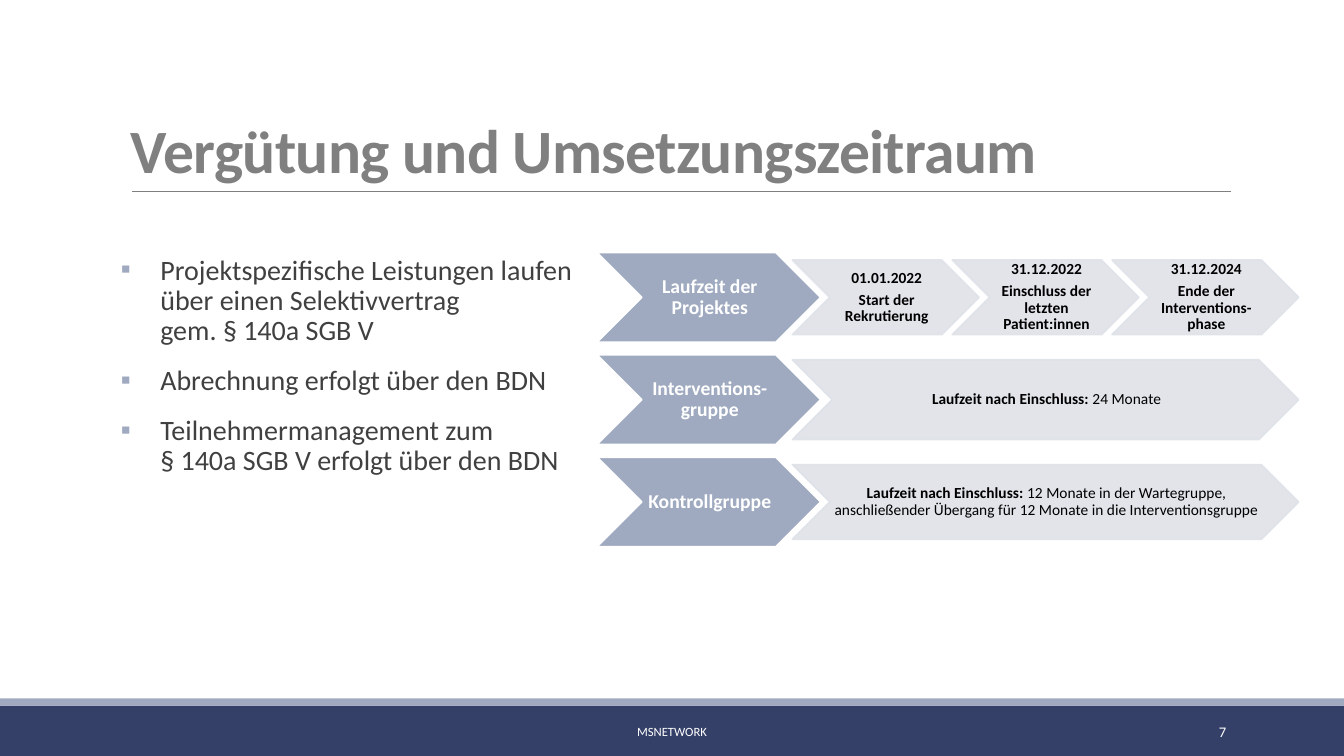
from dataclasses import dataclass

from lxml.etree import SubElement
from pptx import Presentation
from pptx.dml.color import RGBColor
from pptx.enum.shapes import MSO_CONNECTOR, MSO_SHAPE
from pptx.enum.text import MSO_ANCHOR, PP_ALIGN
from pptx.oxml.ns import qn
from pptx.util import Inches, Pt


@dataclass(frozen=True)
class Theme:
    """Colours, font and type sizes of the slide."""
    font: str = "Calibri"
    navy: str = "344068"
    blue: str = "9FAAC0"
    pale: str = "DFE2E8"
    grey: str = "808080"
    body: str = "404040"
    white: str = "FFFFFF"
    black: str = "000000"
    title_size: float = 44
    body_size: float = 20
    phase_size: float = 14
    detail_size: float = 11
    page_size: float = 10.5
    footer_size: float = 9


class SlideBuilder:
    """Draws styled elements on the current slide."""

    def __init__(self, slide, theme):
        """Keep the slide and its theme."""
        self.slide = slide
        self.theme = theme

    def style(self, span, size, color, bold=False):
        """Format one run."""
        span.font.name = self.theme.font
        span.font.size = Pt(size)
        span.font.bold = bold
        span.font.color.rgb = RGBColor.from_string(color)

    def shape(self, kind, left, top, width, height, fill):
        """Add a filled preset shape without outline or shadow."""
        shape = self.slide.shapes.add_shape(
            kind, Inches(left), Inches(top), Inches(width), Inches(height))
        shape.shadow.inherit = False
        shape.fill.solid()
        shape.fill.fore_color.rgb = RGBColor.from_string(fill)
        shape.line.fill.background()
        return shape

    def rule(self, left, right, top):
        """Add a thin horizontal line."""
        line = self.slide.shapes.add_connector(
            MSO_CONNECTOR.STRAIGHT, Inches(left), Inches(top), Inches(right), Inches(top))
        line.line.color.rgb = RGBColor.from_string(self.theme.grey)
        line.line.width = Pt(0.5)
        SubElement(line._element.spPr, qn("a:effectLst"))

    def text(self, words, left, top, width, height, size, color,
             align=PP_ALIGN.LEFT, anchor=MSO_ANCHOR.MIDDLE, bold=False):
        """Add a one-paragraph text box and return its paragraph."""
        box = self.slide.shapes.add_textbox(
            Inches(left), Inches(top), Inches(width), Inches(height))
        frame = box.text_frame
        frame.word_wrap = True
        frame.vertical_anchor = anchor
        frame.text = words
        para = frame.paragraphs[0]
        para.alignment = align
        self.style(para.runs[0], size, color, bold)
        return para

    def bullets(self, items, left, top, width, height):
        """Add a list with square bullets."""
        box = self.slide.shapes.add_textbox(
            Inches(left), Inches(top), Inches(width), Inches(height))
        frame = box.text_frame
        frame.word_wrap = True
        frame.margin_left = frame.margin_right = 0
        for index, item in enumerate(items):
            para = frame.paragraphs[0] if index == 0 else frame.add_paragraph()
            para.text = item
            props = para._p.get_or_add_pPr()
            props.set("marL", str(Inches(0.39)))
            props.set("indent", str(Inches(-0.39)))
            color = SubElement(props, qn("a:buClr"))
            SubElement(color, qn("a:srgbClr"), val=self.theme.blue)
            SubElement(props, qn("a:buFont"), typeface=self.theme.font)
            SubElement(props, qn("a:buChar"), char="▪")
            para.line_spacing = 0.9
            para.space_before = Pt(12 if index else 0)
            para.space_after = Pt(2)
            for span in para.runs:
                self.style(span, self.theme.body_size, self.theme.body)

    def chevron(self, lines, left, middle, width, height, size, fill, outline, color, opacity=100):
        """Add a chevron whose lines are pairs of bold and regular text."""
        shape = self.shape(MSO_SHAPE.CHEVRON, left, middle - height / 2, width, height, fill)
        shape.line.color.rgb = RGBColor.from_string(outline)
        shape.line.width = Pt(1.25)
        if opacity < 100:
            for paint in shape._element.spPr.iter(qn("a:srgbClr")):
                SubElement(paint, qn("a:alpha"), val=str(opacity * 1000))
        frame = shape.text_frame
        frame.word_wrap = True
        frame.vertical_anchor = MSO_ANCHOR.MIDDLE
        frame.margin_left, frame.margin_right = Inches(0.02), 0
        frame.margin_top = frame.margin_bottom = Inches(0.01)
        for index, (strong, plain) in enumerate(lines):
            para = frame.paragraphs[0] if index == 0 else frame.add_paragraph()
            para.text = strong
            para.alignment = PP_ALIGN.CENTER
            para.line_spacing = 0.9
            para.space_after = Pt(size * 0.35)
            self.style(para.runs[0], size, color, True)
            if plain:
                span = para.add_run()
                span.text = plain
                self.style(span, size, color)

    def phase(self, name, middle):
        """Add the dark chevron that names a row."""
        theme = self.theme
        self.chevron([(name, "")], 5.92, middle, 2.22, 0.89,
                     theme.phase_size, theme.blue, theme.white, theme.white)

    def detail(self, lines, left, middle, width, height):
        """Add a pale chevron with details of a row."""
        theme = self.theme
        self.chevron(lines, left, middle, width, height,
                     theme.detail_size, theme.pale, theme.pale, theme.black, 90)


BULLETS = [
    "Projektspezifische Leistungen laufen über einen Selektivvertrag\vgem. § 140a SGB V",
    "Abrechnung erfolgt über den BDN",
    "Teilnehmermanagement zum\v§ 140a SGB V erfolgt über den BDN",
]
TERM = "Laufzeit nach Einschluss: "
MILESTONES = [
    [("01.01.2022", ""), ("Start der Rekrutierung", "")],
    [("31.12.2022", ""), ("Einschluss der letzten Patient:innen", "")],
    [("31.12.2024", ""), ("Ende der Interventions-phase", "")],
]
ROWS = [
    ("Laufzeit der Projektes", MILESTONES, 1.85, 0.74),
    ("Interventions-gruppe", [[(TERM, "24 Monate")]], 5.02, 0.79),
    ("Kontrollgruppe", [[(TERM, "12 Monate in der Wartegruppe, anschließender Übergang "
                                "für 12 Monate in die Interventionsgruppe")]], 5.02, 0.74),
]


def main():
    """Build and save the slide."""
    deck = Presentation()
    deck.slide_width, deck.slide_height = Inches(13.33), Inches(7.5)
    theme = Theme()
    page = SlideBuilder(deck.slides.add_slide(deck.slide_layouts[6]), theme)

    page.shape(MSO_SHAPE.RECTANGLE, 0, 7, 13.33, 0.5, theme.navy)
    page.shape(MSO_SHAPE.RECTANGLE, 0, 6.93, 13.33, 0.07, theme.blue)
    page.rule(1.31, 12.21, 1.9)
    title = page.text("Vergütung und Umsetzungszeitraum", 1.2, 0.31, 11, 1.59,
                      theme.title_size, theme.grey, anchor=MSO_ANCHOR.BOTTOM, bold=True)
    title.line_spacing = 0.85
    title.runs[0]._r.get_or_add_rPr().set("spc", "-50")
    page.bullets(BULLETS, 1.2, 2.49, 4.63, 3.27)
    page.text("MSNETWORK", 4.03, 7.06, 5.27, 0.4,
              theme.footer_size, theme.white, PP_ALIGN.CENTER)
    page.text("7", 10.83, 7.06, 1.43, 0.4, theme.page_size, theme.white, PP_ALIGN.RIGHT)

    for row, (name, details, width, height) in enumerate(ROWS):
        middle = 2.95 + row * 1.015
        page.phase(name, middle)
        for step, lines in enumerate(details):
            page.detail(lines, 7.86 + step * 1.585, middle, width, height)

    deck.save("out.pptx")


if __name__ == "__main__":
    main()
